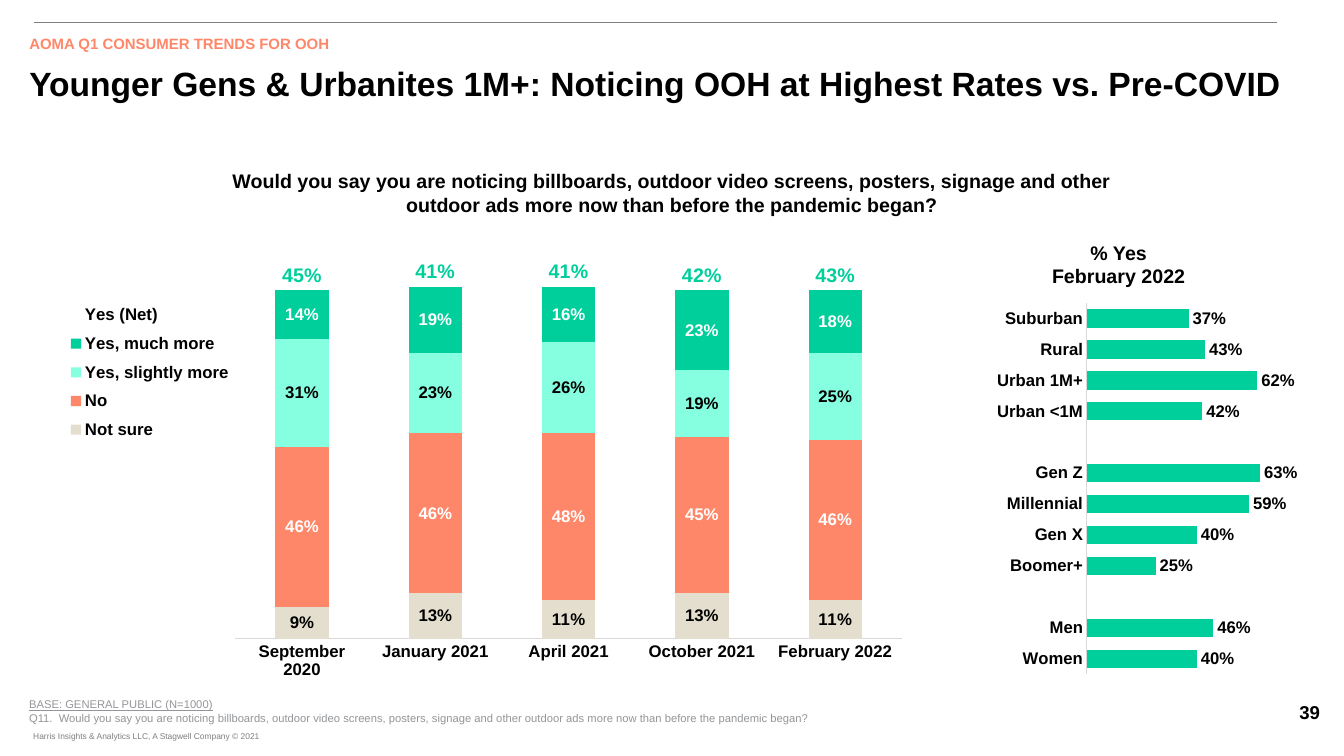
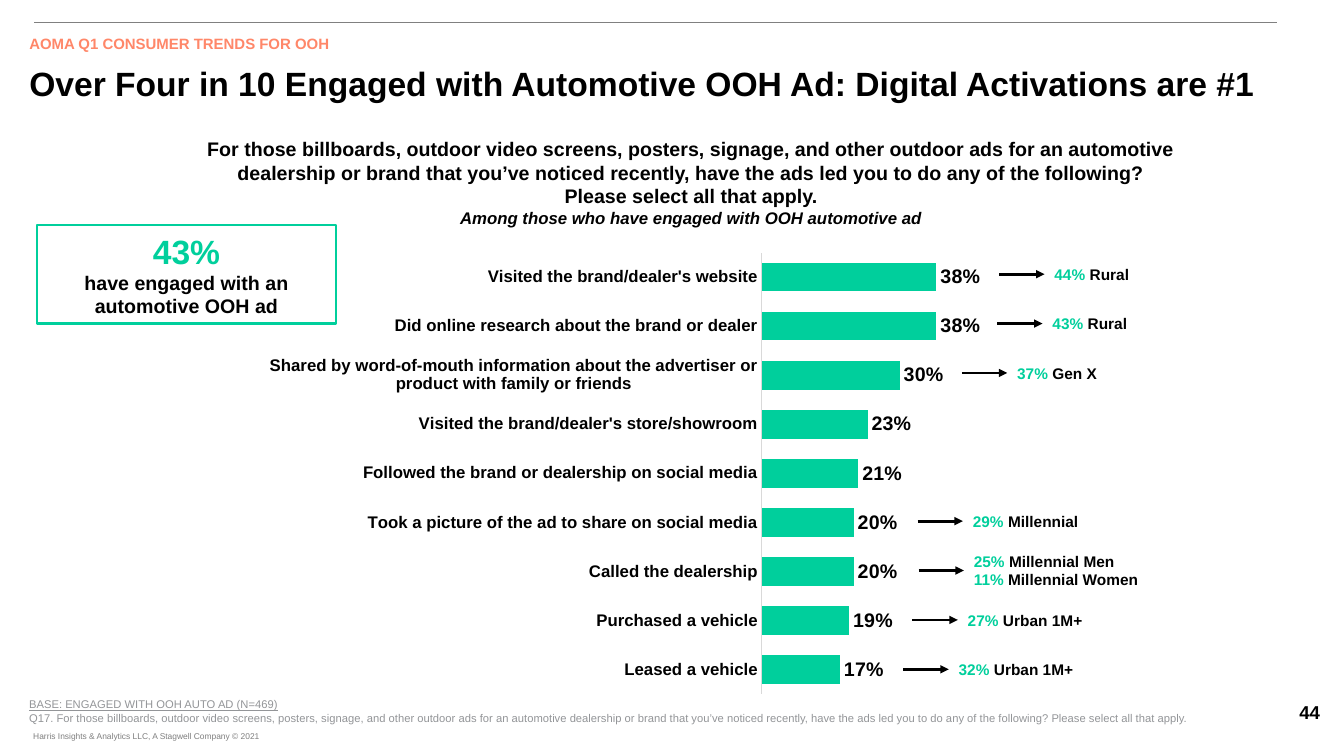
"""Build two survey result slides with native charts."""
import lxml.etree
import pptx
import pptx.chart.data
import pptx.dml.color
import pptx.enum.chart
import pptx.enum.shapes
import pptx.enum.text
import pptx.oxml.ns
import pptx.util

Inches = pptx.util.Inches
Pt = pptx.util.Pt
qn = pptx.oxml.ns.qn
ALIGN = pptx.enum.text.PP_ALIGN
ANCHOR = pptx.enum.text.MSO_ANCHOR
KIND = pptx.enum.chart.XL_CHART_TYPE
SPOT = pptx.enum.chart.XL_LABEL_POSITION
HUES = {
    "black": "000000", "white": "FFFFFF", "green": "00CF9C", "mint": "86FFE1",
    "coral": "FF8769", "sand": "E3DECE", "gray": "808080", "note": "939598",
    "mark": "7F7F7F", "axis": "D9D9D9",
}


def rgb(hue):
    return pptx.dml.color.RGBColor.from_string(HUES[hue])


def put(item, **values):
    for name, value in values.items():
        setattr(item, name, value)


def area(*box):
    return [Inches(side) for side in box]


class Deck:
    def __init__(self):
        self.show = pptx.Presentation()
        put(self.show, slide_width=Inches(13.33), slide_height=Inches(7.5))
        self.slide = None

    def style(self, font, size, hue="black", bold=True, **look):
        put(font, name="Arial", size=Pt(size), bold=bold, **look)
        font.color.rgb = rgb(hue)

    def words(self, frame, lines, align=ALIGN.LEFT, anchor=ANCHOR.TOP):
        put(frame, word_wrap=True, vertical_anchor=anchor,
            auto_size=pptx.enum.text.MSO_AUTO_SIZE.NONE)
        for row, runs in enumerate(lines):
            para = frame.add_paragraph() if row else frame.paragraphs[0]
            put(para, alignment=align, space_before=Pt(0))
            for text, look in runs:
                run = para.add_run()
                run.text = text
                self.style(run.font, **look)

    def text(self, box, lines, align=ALIGN.LEFT, anchor=ANCHOR.TOP):
        frame = self.slide.shapes.add_textbox(*area(*box)).text_frame
        self.words(frame, lines, align, anchor)
        return frame

    def holder(self, shape, box, text, look):
        left, top, width, height = area(*box)
        put(shape, left=left, top=top, width=width, height=height)
        self.words(shape.text_frame, [[(text, look)]])

    def line(self, start, end, hue, width, arrow=False):
        link = self.slide.shapes.add_connector(
            pptx.enum.shapes.MSO_CONNECTOR.STRAIGHT, *area(*start, *end))
        link.line.color.rgb = rgb(hue)
        link.line.width = Pt(width)
        props = link._element.spPr
        if arrow:
            lxml.etree.SubElement(
                props.find(qn("a:ln")), qn("a:tailEnd"), type="triangle")
        lxml.etree.SubElement(props, qn("a:effectLst"))

    def frame(self, box, lines):
        shape = self.slide.shapes.add_shape(
            pptx.enum.shapes.MSO_SHAPE.RECTANGLE, *area(*box))
        shape.shadow.inherit = False
        shape.fill.background()
        shape.line.color.rgb = rgb("green")
        shape.line.width = Pt(1.5)
        self.words(shape.text_frame, lines, ALIGN.CENTER, ANCHOR.MIDDLE)

    def page(self, title, number, base, ask):
        self.slide = self.show.slides.add_slide(self.show.slide_layouts[1])
        self.line((0.34, 0.22), (12.67, 0.22), "gray", 0.5)
        head, body = self.slide.placeholders
        self.holder(head, (0.19, 0.57, 13.1, 0.39), title, dict(size=24))
        props = body.text_frame.paragraphs[0]._p.get_or_add_pPr()
        for name in ("marL", "indent"):
            props.set(name, "0")
        lxml.etree.SubElement(props, qn("a:buNone"))
        self.holder(body, (0.19, 0.29, 6.67, 0.28),
                    "AOMA Q1 CONSUMER TRENDS FOR OOH", dict(size=10.7, hue="coral"))
        note = dict(size=8, hue="note", bold=False)
        self.text((0.19, 6.87, 13.1, 0.37),
                  [[(base, dict(note, underline=True))], [(ask, note)]])
        mark = self.text((0.33, 7.2, 3, 0.2), [[(
            "Harris Insights & Analytics LLC, A Stagwell Company © 2021",
            dict(size=6, hue="mark", bold=False))]])
        mark.margin_left = 0
        self.text((12.66, 6.9, 0.66, 0.33), [[(number, dict(size=13.3))]], ALIGN.CENTER)

    def place(self, node, spot, box, inner=False):
        old = node.find(qn("c:layout"))
        if old is not None:
            node.remove(old)
        layout = lxml.etree.Element(qn("c:layout"))
        node.insert(spot, layout)
        manual = lxml.etree.SubElement(layout, qn("c:manualLayout"))
        rules = [("layoutTarget", "inner")] if inner else []
        rules += [("xMode", "edge"), ("yMode", "edge")]
        rules += zip("xywh", box)
        for name, value in rules:
            lxml.etree.SubElement(manual, qn("c:" + name), val=str(value))

    def chart(self, kind, box, cats, rows, plot, top, gap, lap=0):
        data = pptx.chart.data.CategoryChartData(number_format="0%")
        data.categories = cats
        for name, values, *rest in rows:
            data.add_series(name, values)
        chart = self.slide.shapes.add_chart(kind, *area(*box), data).chart
        put(chart, has_title=False, has_legend=False)
        self.style(chart.font, 12)
        put(chart.value_axis, minimum_scale=0, maximum_scale=top,
            has_major_gridlines=False, visible=False)
        axis = chart.category_axis
        put(axis, reverse_order=True, has_major_gridlines=False,
            major_tick_mark=pptx.enum.chart.XL_TICK_MARK.NONE)
        axis.format.line.color.rgb = rgb("axis")
        axis.format.line.width = Pt(0.75)
        self.style(axis.tick_labels.font, 12)
        put(chart.plots[0], gap_width=gap, overlap=lap, vary_by_categories=False)
        for bars, (name, values, fill, hue, size, spot) in zip(chart.plots[0].series, rows):
            if fill:
                bars.format.fill.solid()
                bars.format.fill.fore_color.rgb = rgb(fill)
            else:
                bars.format.fill.background()
            tags = bars.data_labels
            put(tags, show_value=True, number_format="0%",
                number_format_is_linked=False, position=spot)
            self.style(tags.font, size, hue)
        self.place(chart._chartSpace.find(".//" + qn("c:plotArea")), 0, plot, True)
        return chart

    def legend(self, chart, box):
        chart.has_legend = True
        key = chart.legend
        put(key, position=pptx.enum.chart.XL_LEGEND_POSITION.RIGHT,
            include_in_layout=False)
        self.style(key.font, 12)
        self.place(key._element, 1, box)

    def callout(self, left, row, pairs):
        level = 2.72 + 0.49 * row
        tall = 0.11 + 0.18 * len(pairs)
        self.line((left, level), (left + 0.45, level), "black", 2, True)
        lines = [[(rate + " ", dict(size=11, hue="green")), (group, dict(size=11))]
                 for rate, group in pairs]
        self.text((left + 0.45, level - tall / 2, 1.94, tall), lines, anchor=ANCHOR.MIDDLE)


def notice(deck):
    ask = ("Would you say you are noticing billboards, outdoor video screens, posters, "
           "signage and other outdoor ads more now than before the pandemic began?")
    deck.page("Younger Gens & Urbanites 1M+: Noticing OOH at Highest Rates vs. Pre-COVID",
              "39", "BASE: GENERAL PUBLIC (N=1000)", "Q11.  " + ask)
    big = dict(size=14)
    deck.text((2.12, 1.63, 9.09, 0.57), [[(ask, big)]], ALIGN.CENTER)
    deck.chart(
        KIND.BAR_CLUSTERED, (8.95, 2.85, 3.92, 3.92),
        ["Suburban", "Rural", "Urban 1M+", "Urban <1M", "", "Gen Z", "Millennial",
         "Gen X", "Boomer+", "", "Men", "Women"],
        [("Series 1", [0.37, 0.43, 0.62, 0.42, None, 0.63, 0.59, 0.4, 0.25, None, 0.46, 0.4],
          "green", "black", 12, SPOT.OUTSIDE_END)],
        (0.47, 0.04, 0.49, 0.94), 0.7, 70)
    deck.text((9.89, 2.34, 2.41, 0.57),
              [[("% Yes", big)], [("February 2022", big)]], ALIGN.CENTER)
    trend = deck.chart(
        KIND.COLUMN_STACKED, (0.47, 1.99, 8.48, 4.94),
        ["February 2022", "October 2021", "April 2021", "January 2021", "September 2020"],
        [("Not sure", [0.11, 0.13, 0.11, 0.13, 0.09], "sand", "black", 12, SPOT.CENTER),
         ("No", [0.46, 0.45, 0.48, 0.46, 0.46], "coral", "white", 12, SPOT.CENTER),
         ("Yes, slightly more", [0.25, 0.19, 0.26, 0.23, 0.31],
          "mint", "black", 12, SPOT.CENTER),
         ("Yes, much more", [0.18, 0.23, 0.16, 0.19, 0.14],
          "green", "white", 12, SPOT.CENTER),
         ("Yes (Net)", [0.43, 0.42, 0.41, 0.41, 0.45],
          None, "green", 14, SPOT.INSIDE_BASE)],
        (0.22, 0.11, 0.78, 0.77), 1.1, 150, 100)
    deck.legend(trend, (0.02, 0.19, 0.2, 0.31))


def engage(deck):
    ask = ("For those billboards, outdoor video screens, posters, signage, and other "
           "outdoor ads for an automotive dealership or brand that you’ve noticed "
           "recently, have the ads led you to do any of the following?")
    pick = "Please select all that apply."
    deck.page("Over Four in 10 Engaged with Automotive OOH Ad: Digital Activations are #1",
              "44", "BASE: ENGAGED WITH OOH AUTO AD (N=469)", f"Q17. {ask} {pick}")
    big = dict(size=14)
    deck.text((1.85, 1.31, 10.01, 1.04),
              [[(ask, big)], [(pick, big)],
               [("Among those who have engaged with OOH automotive ad",
                 dict(size=12, italic=True))]], ALIGN.CENTER)
    deck.chart(
        KIND.BAR_CLUSTERED, (2.34, 2.5, 10.23, 4.39),
        ["Visited the brand/dealer's website",
         "Did online research about the brand or dealer",
         "Shared by word-of-mouth information about the advertiser or product "
         "with family or friends",
         "Visited the brand/dealer's store/showroom",
         "Followed the brand or dealership on social media",
         "Took a picture of the ad to share on social media",
         "Called the dealership", "Purchased a vehicle", "Leased a vehicle"],
        [("Series 1", [0.38, 0.38, 0.3, 0.23, 0.21, 0.2, 0.2, 0.19, 0.17],
          "green", "black", 14, SPOT.OUTSIDE_END)],
        (0.51, 0, 0.49, 1), 1.1, 70, -15)
    deck.frame((0.37, 2.23, 2.96, 0.98),
               [[("43%", dict(size=24, hue="green"))],
                [("have engaged with an automotive OOH ad", big)]])
    for left, row, pairs in [
            (9.91, 0, [("44%", "Rural")]),
            (9.89, 1, [("43%", "Rural")]),
            (9.54, 2, [("37%", "Gen X")]),
            (9.1, 5, [("29%", "Millennial")]),
            (9.11, 6, [("25%", "Millennial Men"), ("11%", "Millennial Women")]),
            (9.05, 7, [("27%", "Urban 1M+")]),
            (8.96, 8, [("32%", "Urban 1M+")])]:
        deck.callout(left, row, pairs)


def main():
    deck = Deck()
    notice(deck)
    engage(deck)
    deck.show.save("out.pptx")


if __name__ == "__main__":
    main()
